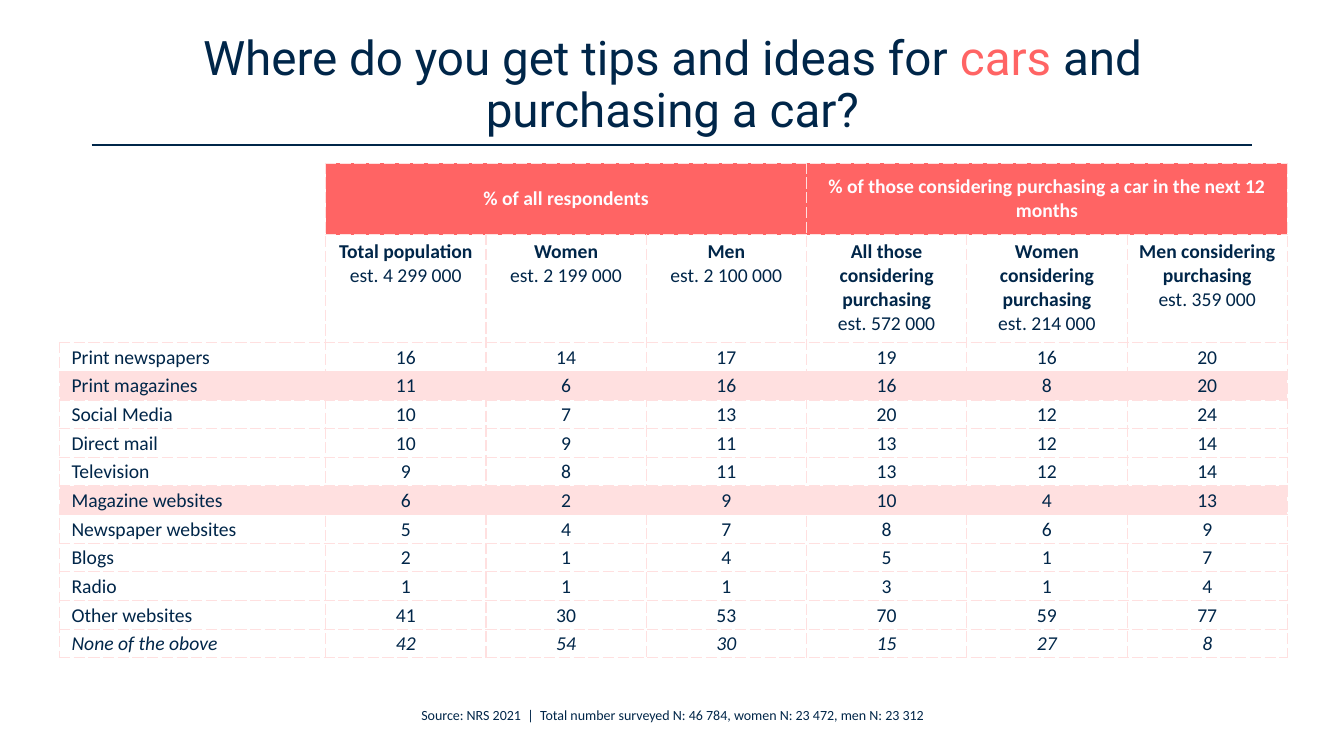
from lxml import etree
from pptx import Presentation
from pptx.dml.color import RGBColor
from pptx.enum.shapes import MSO_CONNECTOR as CONNECTOR
from pptx.enum.text import MSO_ANCHOR as ANCHOR, MSO_AUTO_SIZE as AUTO_SIZE, PP_ALIGN as ALIGN
from pptx.oxml import parse_xml
from pptx.oxml.ns import nsdecls, qn
from pptx.util import Inches, Pt

NAVY = RGBColor(0x00, 0x26, 0x49)
CORAL = RGBColor(0xFF, 0x64, 0x64)
PINK = RGBColor(0xFF, 0xE0, 0xE0)
OFF_WHITE = RGBColor(0xFE, 0xFC, 0xFF)
WHITE = RGBColor(0xFF, 0xFF, 0xFF)

GROUPS = [
    "% of all respondents",
    "% of those considering purchasing a car in the next 12 months",
]
AUDIENCES = [
    ("Total population", "est. 4 299 000"),
    ("Women", "est. 2 199 000"),
    ("Men", "est. 2 100 000"),
    ("All those considering purchasing", "est. 572 000"),
    ("Women considering purchasing", "est. 214 000"),
    ("Men considering purchasing", "est. 359 000"),
]
SOURCES = [
    ("Print newspapers", 16, 14, 17, 19, 16, 20),
    ("Print magazines", 11, 6, 16, 16, 8, 20),
    ("Social Media", 10, 7, 13, 20, 12, 24),
    ("Direct mail", 10, 9, 11, 13, 12, 14),
    ("Television", 9, 8, 11, 13, 12, 14),
    ("Magazine websites", 6, 2, 9, 10, 4, 13),
    ("Newspaper websites", 5, 4, 7, 8, 6, 9),
    ("Blogs", 2, 1, 4, 5, 1, 7),
    ("Radio", 1, 1, 1, 3, 1, 4),
    ("Other websites", 41, 30, 53, 70, 59, 77),
    ("None of the obove", 42, 54, 30, 15, 27, 8),
]
HIGHLIGHTED = {"Print magazines", "Magazine websites"}
LABEL_WIDTH, VALUE_WIDTH = 2.64, 1.59
HEADER_HEIGHTS = [0.71, 1.07]
SOURCE_HEIGHT = 3.13 / len(SOURCES)


def write(paragraph, text, size=14, color=NAVY, bold=False, italic=False, align=ALIGN.CENTER):
    paragraph.text = text
    paragraph.alignment = align
    font = paragraph.font
    font.name, font.size = "Calibri", Pt(size)
    font.bold, font.italic = bold, italic
    font.color.rgb = color


def add_borders(cell, dashed_sides):
    """Dash the given sides (letters of LRTB) and clear the others."""
    properties = cell._tc.get_or_add_tcPr()
    for position, side in enumerate("LRTB"):
        if side in dashed_sides:
            stroke = f'<a:solidFill><a:srgbClr val="{PINK}"/></a:solidFill><a:prstDash val="sysDash"/>'
        else:
            stroke = "<a:noFill/>"
        border = parse_xml(f'<a:ln{side} {nsdecls("a")} w="12700">{stroke}</a:ln{side}>')
        properties.insert(position, border)


prs = Presentation()
prs.slide_width, prs.slide_height = Inches(13.33), Inches(7.5)
slide = prs.slides.add_slide(prs.slide_layouts[5])

# Title and rule
title = slide.shapes.title
title.left, title.top = Inches(0.92), Inches(0.32)
title.width, title.height = Inches(11.5), Inches(1.07)
title.text_frame.vertical_anchor = ANCHOR.MIDDLE
title.text_frame.auto_size = AUTO_SIZE.NONE
question = title.text_frame.paragraphs[0]
question.alignment = ALIGN.CENTER
question.line_spacing = 0.9
question.font.name, question.font.size = "Roboto", Pt(34)
for words, color in [
    ("Where do you get tips and ideas for ", NAVY),
    ("cars ", CORAL),
    ("and purchasing a car?", NAVY),
]:
    run = question.add_run()
    run.text = words
    run.font.color.rgb = color

rule = slide.shapes.add_connector(
    CONNECTOR.STRAIGHT, Inches(0.91), Inches(1.44), Inches(12.42), Inches(1.44))
rule.line.color.rgb = NAVY
rule.line.width = Pt(1)
etree.SubElement(rule._element.spPr, qn("a:effectLst"))

# Table frame
row_heights = HEADER_HEIGHTS + [SOURCE_HEIGHT] * len(SOURCES)
column_widths = [LABEL_WIDTH] + [VALUE_WIDTH] * len(AUDIENCES)
table = slide.shapes.add_table(
    len(row_heights), len(column_widths), Inches(0.59), Inches(1.62),
    Inches(sum(column_widths)), Inches(sum(row_heights))).table
table.first_row = table.horz_banding = False
for row, height in zip(table.rows, row_heights):
    row.height = Inches(height)
for column, width in zip(table.columns, column_widths):
    column.width = Inches(width)
for cell in table.iter_cells():
    cell.fill.background()

# Header rows
corner = table.cell(0, 0)
corner.merge(table.cell(1, 0))
corner.fill.solid()
corner.fill.fore_color.rgb = WHITE

for index, group in enumerate(GROUPS):
    first = 1 + 3 * index
    header = table.cell(0, first)
    header.merge(table.cell(0, first + 2))
    header.vertical_anchor = ANCHOR.MIDDLE
    header.fill.solid()
    header.fill.fore_color.rgb = CORAL
    write(header.text_frame.paragraphs[0], group, color=OFF_WHITE, bold=True)

for column, (audience, estimate) in enumerate(AUDIENCES, 1):
    frame = table.cell(1, column).text_frame
    write(frame.paragraphs[0], audience, bold=True)
    write(frame.add_paragraph(), estimate)

# Source rows
for row, entries in enumerate(SOURCES, len(HEADER_HEIGHTS)):
    for column, entry in enumerate(entries):
        cell = table.cell(row, column)
        cell.vertical_anchor = ANCHOR.MIDDLE
        cell.margin_left = Inches(0.01 if column else 0.12)
        cell.margin_right = cell.margin_top = Inches(0.01)
        cell.margin_bottom = 0
        if entries[0] in HIGHLIGHTED:
            cell.fill.solid()
            cell.fill.fore_color.rgb = PINK
        write(cell.text_frame.paragraphs[0], str(entry),
              italic=entries is SOURCES[-1],
              align=ALIGN.CENTER if column else ALIGN.LEFT)

for row in range(len(row_heights)):
    for column in range(len(column_widths)):
        in_corner = column == 0 and row < len(HEADER_HEIGHTS)
        add_borders(table.cell(row, column), "RB" if in_corner else "LRTB")

# Footnote
footnote = slide.shapes.add_textbox(Inches(3.82), Inches(6.96), Inches(5.7), Inches(0.27))
footnote.text_frame.word_wrap = False
footnote.text_frame.auto_size = AUTO_SIZE.SHAPE_TO_FIT_TEXT
write(footnote.text_frame.paragraphs[0],
      "Source: NRS 2021  |  Total number surveyed N: 46 784, women N: 23 472, men N: 23 312",
      size=10)

prs.save("out.pptx")
